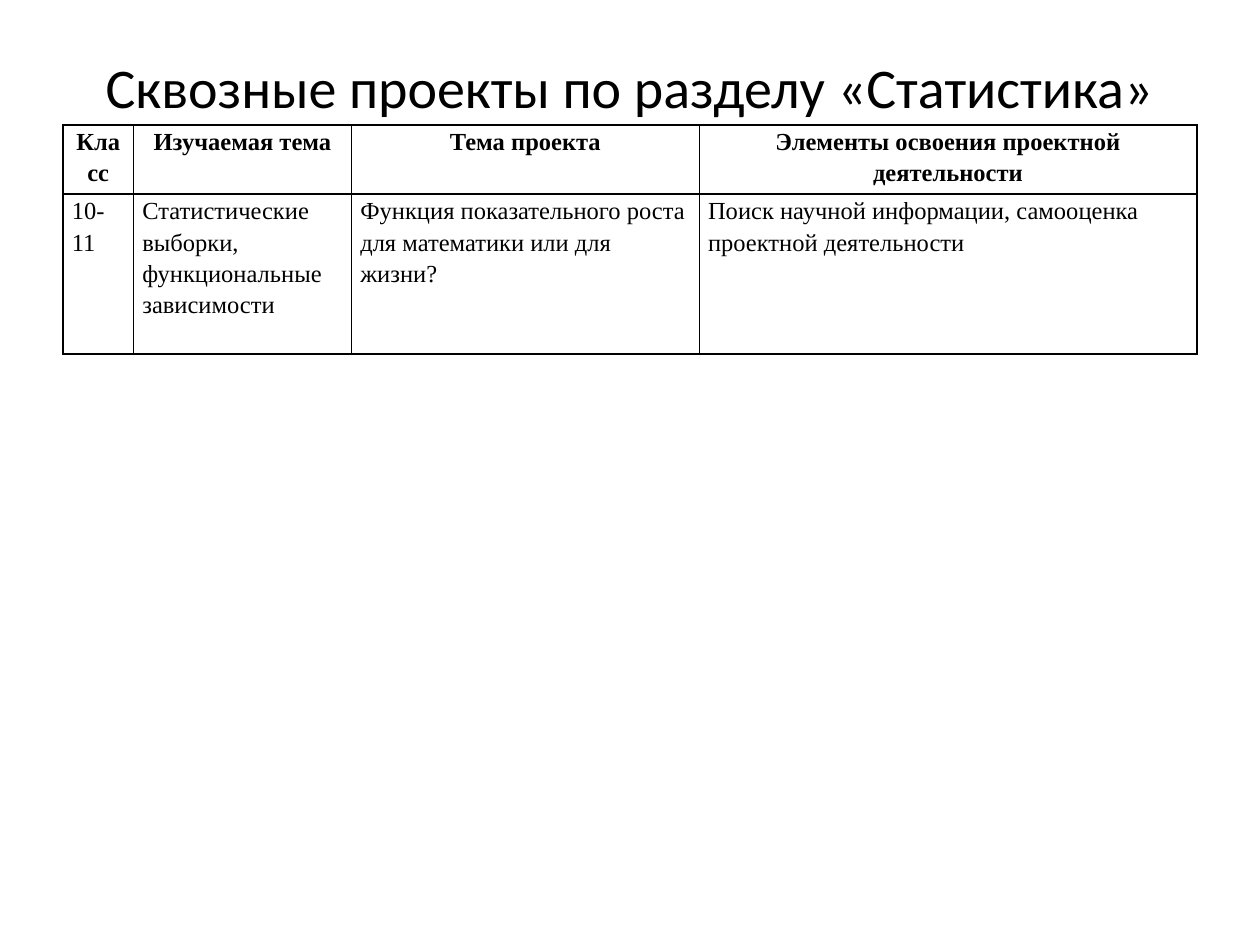
from pptx import Presentation
from pptx.dml.color import RGBColor
from pptx.enum.text import MSO_ANCHOR, PP_ALIGN
from pptx.util import Inches, Pt
from lxml.etree import SubElement
from pptx.oxml.ns import qn

BLACK = RGBColor(0x00, 0x00, 0x00)
WHITE = RGBColor(0xFF, 0xFF, 0xFF)

TITLE = "Сквозные проекты по разделу «Статистика»"
ROWS = [
    ["Класс", "Изучаемая тема", "Тема проекта",
     "Элементы освоения проектной деятельности"],
    ["10-11", "Статистические выборки, функциональные зависимости",
     "Функция показательного роста для математики или для жизни?",
     "Поиск научной информации, самооценка проектной деятельности"],
]
WIDTHS = [0.56, 1.73, 2.76, 3.95]
HEIGHTS = [0.55, 1.27]


def write(frame, text, font, size, bold=False, align=PP_ALIGN.LEFT, space=1.0):
    frame.word_wrap = True
    para = frame.paragraphs[0]
    para.alignment = align
    para.line_spacing = space
    run = para.add_run()
    run.text = text
    run.font.name = font
    run.font.size = Pt(size)
    run.font.bold = bold
    run.font.color.rgb = BLACK


def border(cell):
    props = cell._tc.get_or_add_tcPr()
    for spot, side in enumerate(("a:lnL", "a:lnR", "a:lnT", "a:lnB")):
        line = props.makeelement(qn(side), {"w": str(Pt(1))})
        fill = SubElement(line, qn("a:solidFill"))
        SubElement(fill, qn("a:srgbClr"), val=str(BLACK))
        props.insert(spot, line)


def add_title(slide, left, top, width, height):
    title = slide.shapes.title
    title.left, title.top = Inches(left), Inches(top)
    title.width, title.height = Inches(width), Inches(height)
    title.text_frame.vertical_anchor = MSO_ANCHOR.MIDDLE
    write(title.text_frame, TITLE, "Calibri", 32, align=PP_ALIGN.CENTER)


def add_grid(slide, left, top, width, height):
    table = slide.shapes.add_table(
        len(ROWS), len(WIDTHS), Inches(left), Inches(top),
        Inches(width), Inches(height)).table
    table.horz_banding = False
    for col, size in zip(table.columns, WIDTHS):
        col.width = Inches(width * size / sum(WIDTHS))
    for row, size in zip(table.rows, HEIGHTS):
        row.height = Inches(height * size / sum(HEIGHTS))
    for r, texts in enumerate(ROWS):
        head = r == 0
        for c, text in enumerate(texts):
            cell = table.cell(r, c)
            cell.margin_left = cell.margin_right = Inches(0.07)
            cell.margin_top = cell.margin_bottom = 0
            cell.fill.solid()
            cell.fill.fore_color.rgb = WHITE
            border(cell)
            write(cell.text_frame, text, "Times New Roman", 14, bold=head,
                  align=PP_ALIGN.CENTER if head else PP_ALIGN.LEFT, space=1.15)


def main():
    deck = Presentation()
    deck.slide_width, deck.slide_height = Inches(10), Inches(7.5)
    slide = deck.slides.add_slide(deck.slide_layouts[5])
    add_title(slide, 0.5, 0.3, 9, 0.77)
    add_grid(slide, 0.5, 0.99, 9, 1.82)
    deck.save("out.pptx")


if __name__ == "__main__":
    main()
